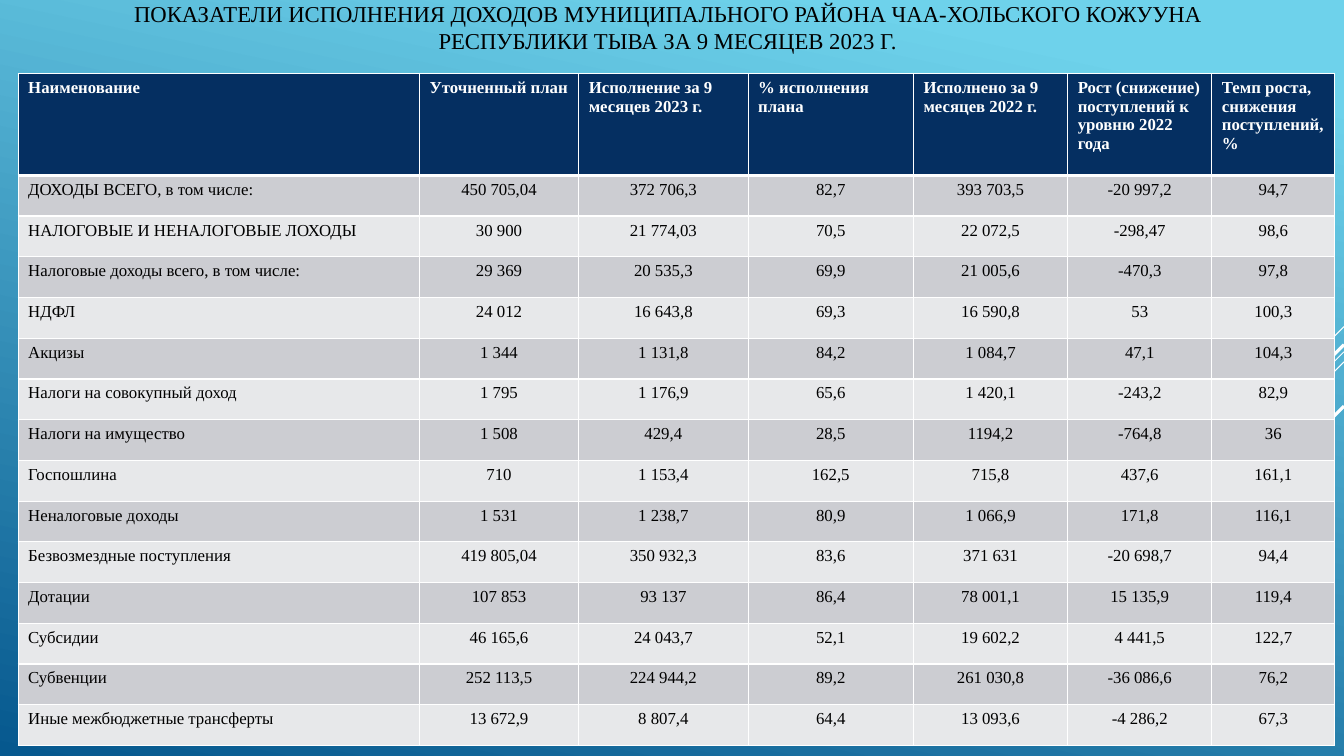
from lxml.etree import SubElement
from pptx import Presentation
from pptx.dml.color import RGBColor
from pptx.enum.shapes import MSO_CONNECTOR
from pptx.enum.text import MSO_ANCHOR, MSO_AUTO_SIZE, PP_ALIGN
from pptx.oxml import parse_xml
from pptx.oxml.ns import nsdecls, qn
from pptx.util import Inches, Pt

COLORS = {
    "sky": "6ED2EB",
    "deep": "06588E",
    "header": "052F61",
    "odd": "CCCDD2",
    "even": "E7E8EA",
    "white": "FFFFFF",
    "black": "000000",
}
FONT = "Times New Roman"
TITLE = (
    "ПОКАЗАТЕЛИ ИСПОЛНЕНИЯ ДОХОДОВ МУНИЦИПАЛЬНОГО РАЙОНА "
    "ЧАА-ХОЛЬСКОГО КОЖУУНА РЕСПУБЛИКИ ТЫВА ЗА 9 МЕСЯЦЕВ 2023 Г."
)
RAYS = [
    (3.24, 12.33, 4.24, 0.75),
    (3.49, 10.07, 6.75, 0.75),
    (3.59, 11.26, 5.67, 0.75),
    (3.42, 11.42, 5.33, 2.25),
    (4.03, 11.94, 5.42, 2.25),
]
COLUMN_WIDTHS = [3.98, 1.58, 1.68, 1.64, 1.53, 1.43, 1.22]
TABLE_HEIGHT = 6.67
HEADER_HEIGHT = 1.01
HEADINGS = [
    "Наименование",
    "Уточненный план",
    "Исполнение за 9 месяцев 2023 г.",
    "% исполнения плана",
    "Исполнено за 9 месяцев 2022 г.",
    "Рост (снижение) поступлений к уровню 2022 года",
    "Темп роста, снижения поступлений, %",
]
INCOMES = [
    "ДОХОДЫ ВСЕГО, в том числе:|450 705,04|372 706,3|82,7|393 703,5|-20 997,2|94,7",
    "НАЛОГОВЫЕ И НЕНАЛОГОВЫЕ ЛОХОДЫ|30 900|21 774,03|70,5|22 072,5|-298,47|98,6",
    "Налоговые доходы всего, в том числе:|29 369|20 535,3|69,9|21 005,6|-470,3|97,8",
    "НДФЛ|24 012|16 643,8|69,3|16 590,8|53|100,3",
    "Акцизы|1 344|1 131,8|84,2|1 084,7|47,1|104,3",
    "Налоги на совокупный доход|1 795|1 176,9|65,6|1 420,1|-243,2|82,9",
    "Налоги на имущество|1 508|429,4|28,5|1194,2|-764,8|36",
    "Госпошлина|710|1 153,4|162,5|715,8|437,6|161,1",
    "Неналоговые доходы|1 531|1 238,7|80,9|1 066,9|171,8|116,1",
    "Безвозмездные поступления|419 805,04|350 932,3|83,6|371 631|-20 698,7|94,4",
    "Дотации|107 853|93 137|86,4|78 001,1|15 135,9|119,4",
    "Субсидии|46 165,6|24 043,7|52,1|19 602,2|4 441,5|122,7",
    "Субвенции|252 113,5|224 944,2|89,2|261 030,8|-36 086,6|76,2",
    "Иные межбюджетные трансферты|13 672,9|8 807,4|64,4|13 093,6|-4 286,2|67,3",
]


def rgb(name):
    """Return the named colour."""
    return RGBColor.from_string(COLORS[name])


def write(frame, text, size, color, align, bold=False):
    """Put one formatted paragraph into a text frame."""
    frame.text = text
    paragraph = frame.paragraphs[0]
    paragraph.alignment = align
    font = paragraph.runs[0].font
    font.name, font.size, font.bold = FONT, Pt(size), bold
    font.color.rgb = rgb(color)


def paint_background(slide):
    """Fill the background with the blue gradient."""
    fill = slide.background.fill
    fill.gradient()
    fill.gradient_angle = 258
    for stop, (name, position) in zip(fill.gradient_stops, [("sky", 0.1), ("deep", 1)]):
        stop.color.rgb = rgb(name)
        stop.position = position


def add_title(slide):
    """Place the heading above the table."""
    title = slide.shapes.title
    title.left, title.top = Inches(0.83), Inches(0.2)
    title.width, title.height = Inches(11.58), Inches(0.39)
    frame = title.text_frame
    frame.word_wrap = True
    frame.auto_size = MSO_AUTO_SIZE.NONE
    frame.vertical_anchor = MSO_ANCHOR.BOTTOM
    write(frame, TITLE, 16.2, "black", PP_ALIGN.CENTER)


def add_ray(slide, start_y, end_x, end_y, width):
    """Draw a white diagonal from the right edge."""
    ray = slide.shapes.add_connector(
        MSO_CONNECTOR.STRAIGHT,
        Inches(13.33), Inches(start_y), Inches(end_x), Inches(end_y),
    )
    ray.line.color.rgb = rgb("white")
    ray.line.width = Pt(width)
    SubElement(ray.element.spPr, qn("a:effectLst"))


def set_borders(cell, top, bottom):
    """Give a cell white borders of the given top and bottom widths."""
    properties = cell._tc.get_or_add_tcPr()
    for index, (side, width) in enumerate(zip("LRTB", [1, 1, top, bottom])):
        border = parse_xml(
            f'<a:ln{side} {nsdecls("a")} w="{Pt(width)}"><a:solidFill>'
            f'<a:srgbClr val="{COLORS["white"]}"/></a:solidFill></a:ln{side}>'
        )
        properties.insert(index, border)


def add_income_table(slide):
    """Build the table of planned and received incomes."""
    records = [HEADINGS] + [income.split("|") for income in INCOMES]
    table = slide.shapes.add_table(
        len(records), len(HEADINGS),
        Inches(0.18), Inches(0.73), Inches(sum(COLUMN_WIDTHS)), Inches(TABLE_HEIGHT),
    ).table
    for column, width in zip(table.columns, COLUMN_WIDTHS):
        column.width = Inches(width)
    income_height = (TABLE_HEIGHT - HEADER_HEIGHT) / len(INCOMES)
    for r, record in enumerate(records):
        is_header = r == 0
        table.rows[r].height = Inches(HEADER_HEIGHT if is_header else income_height)
        band = "header" if is_header else "odd" if r % 2 else "even"
        for c, text in enumerate(record):
            cell = table.cell(r, c)
            cell.fill.solid()
            cell.fill.fore_color.rgb = rgb(band)
            align = PP_ALIGN.LEFT if is_header or c == 0 else PP_ALIGN.CENTER
            color = "white" if is_header else "black"
            write(cell.text_frame, text, 12, color, align, is_header)
            set_borders(cell, 3 if r == 1 else 1, 3 if is_header else 1)


def main():
    """Create the presentation with the income slide."""
    deck = Presentation()
    deck.slide_width, deck.slide_height = Inches(13.33), Inches(7.5)
    slide = deck.slides.add_slide(deck.slide_layouts[5])
    paint_background(slide)
    for ray in RAYS:
        add_ray(slide, *ray)
    add_title(slide)
    add_income_table(slide)
    deck.save("out.pptx")


if __name__ == "__main__":
    main()
